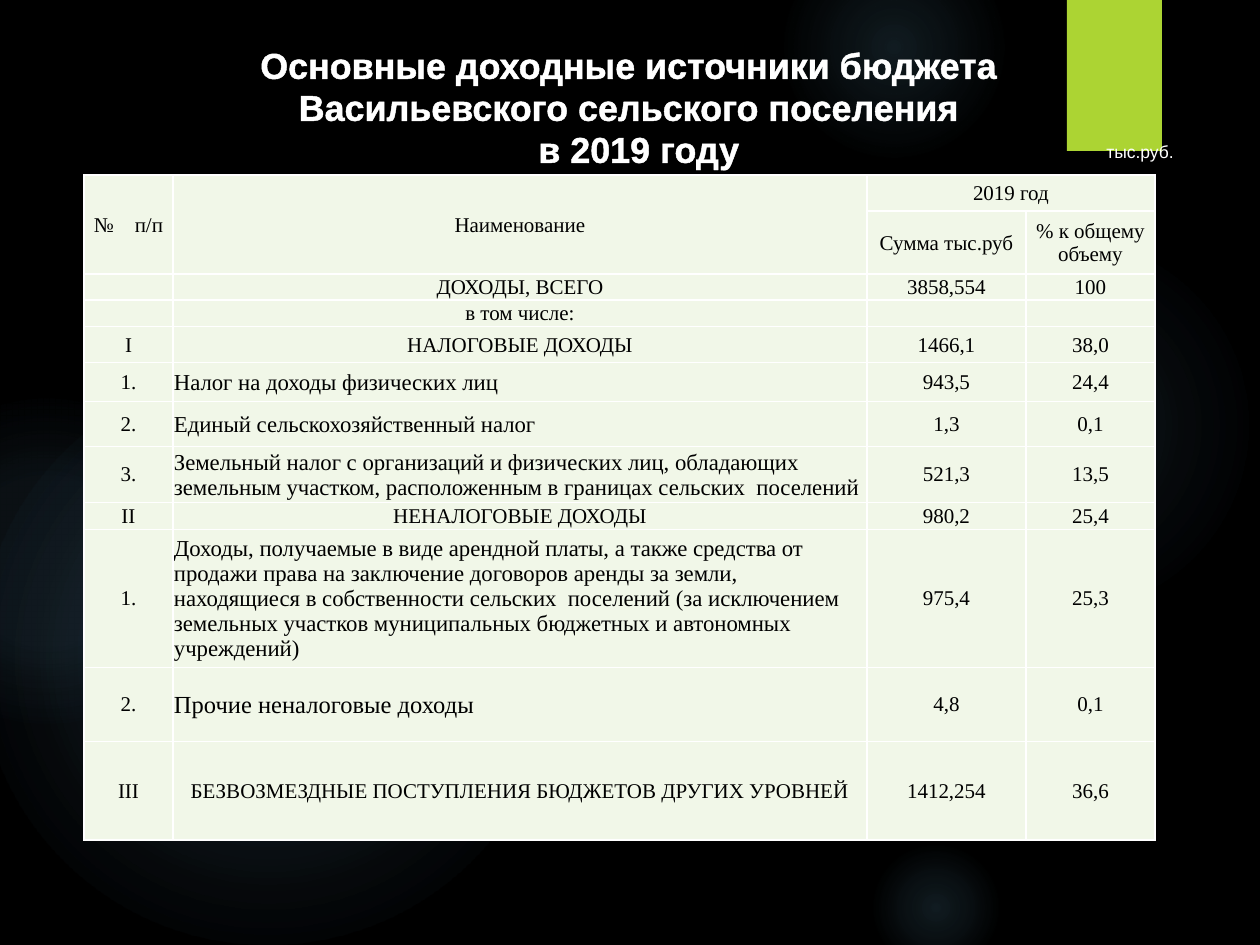
from dataclasses import dataclass
from typing import Any

from lxml.etree import Element, SubElement
from pptx import Presentation
from pptx.dml.color import RGBColor
from pptx.enum.shapes import MSO_SHAPE as Shape
from pptx.enum.text import MSO_ANCHOR as Anchor, PP_ALIGN as Align
from pptx.oxml.ns import qn
from pptx.util import Emu, Pt

EMU_PER_PX = 914400 / 126
WHITE, BLACK, LIME, GLOW, CELL = "FFFFFF", "000000", "ACD433", "7AC4F0", "F1F7E8"
SANS, SERIF = "Arial", "Times New Roman"


@dataclass
class Box:
    left: int
    top: int
    width: int
    height: int


@dataclass
class Glow:
    left: int
    top: int
    size: int
    stops: list[tuple[int, int]]


@dataclass
class Row:
    height: int
    texts: tuple[str, str, str, str]
    name_size: int = 12
    name_align: Any = Align.CENTER


GLOWS = [
    Glow(868, 231, 388, [(0, 7), (36, 6), (69, 0)]),
    Glow(784, -63, 220, [(0, 14), (36, 7), (73, 0)]),
    Glow(868, 840, 136, [(0, 14), (36, 7), (66, 0)]),
    Glow(-21, 368, 577, [(0, 11), (36, 10), (75, 0)]),
    Glow(-116, 399, 325, [(0, 8), (36, 8), (72, 0)]),
]
COLUMN_WIDTHS = [89, 694, 159, 129]
ROWS = [
    Row(36, ("№    п/п", "Наименование", "2019 год", "")),
    Row(63, ("", "", "Сумма тыс.руб", "% к общему объему")),
    Row(26, ("", "ДОХОДЫ, ВСЕГО", "3858,554", "100")),
    Row(26, ("", "в том числе:", "", "")),
    Row(36, ("I", "НАЛОГОВЫЕ ДОХОДЫ", "1466,1", "38,0")),
    Row(39, ("1.", "Налог на доходы физических лиц", "943,5", "24,4"), 13, Align.LEFT),
    Row(45, ("2.", "Единый сельскохозяйственный налог", "1,3", "0,1"), 13, Align.LEFT),
    Row(56, ("3.", "Земельный налог с организаций и физических лиц, обладающих "
             "земельным участком, расположенным в границах сельских  поселений",
             "521,3", "13,5"), 13, Align.LEFT),
    Row(27, ("II", "НЕНАЛОГОВЫЕ ДОХОДЫ", "980,2", "25,4")),
    Row(138, ("1.", "Доходы, получаемые в виде арендной платы, а также средства от "
              "продажи права на заключение договоров аренды за земли, находящиеся "
              "в собственности сельских  поселений (за исключением земельных "
              "участков муниципальных бюджетных и автономных учреждений)",
              "975,4", "25,3"), 13, Align.LEFT),
    Row(74, ("2.", "Прочие неналоговые доходы", "4,8", "0,1"), 14, Align.LEFT),
    Row(99, ("III", "БЕЗВОЗМЕЗДНЫЕ ПОСТУПЛЕНИЯ БЮДЖЕТОВ ДРУГИХ УРОВНЕЙ",
             "1412,254", "36,6")),
]
MERGES = [((0, 0), (1, 0)), ((0, 1), (1, 1)), ((0, 2), (0, 3))]


def px(length: int) -> Emu:
    return Emu(round(length * EMU_PER_PX))


def place(box: Box) -> list[Emu]:
    return [px(length) for length in (box.left, box.top, box.width, box.height)]


def color(value: str) -> RGBColor:
    return RGBColor.from_string(value)


def apply(target: Any, values: dict[str, Any]) -> None:
    for name, value in values.items():
        setattr(target, name, value)


def add_color(parent: Any, value: str, alpha: int = 100) -> None:
    node = SubElement(parent, qn("a:srgbClr"), val=value)
    if alpha < 100:
        SubElement(node, qn("a:alpha"), val=str(alpha * 1000))


def make_line(tag: str, value: str) -> Any:
    line = Element(qn(tag), w=str(Pt(1)))
    add_color(SubElement(line, qn("a:solidFill")), value)
    return line


def add_plain_shape(slide: Any, kind: Any, box: Box) -> Any:
    shape = slide.shapes.add_shape(kind, *place(box))
    shape.shadow.inherit = False
    shape.line.fill.background()
    return shape


def add_glow(slide: Any, glow: Glow) -> None:
    shape = add_plain_shape(slide, Shape.OVAL, Box(glow.left, glow.top, glow.size, glow.size))
    gradient = Element(qn("a:gradFill"), rotWithShape="1")
    stops = SubElement(gradient, qn("a:gsLst"))
    for position, alpha in glow.stops:
        add_color(SubElement(stops, qn("a:gs"), pos=str(position * 1000)), GLOW, alpha)
    circle = SubElement(gradient, qn("a:path"), path="circle")
    SubElement(circle, qn("a:fillToRect"), dict.fromkeys("ltrb", "50000"))
    shape.element.spPr.find(qn("a:prstGeom")).addnext(gradient)


def add_bookmark(slide: Any, box: Box) -> None:
    shape = add_plain_shape(slide, Shape.RECTANGLE, box)
    shape.fill.solid()
    shape.fill.fore_color.rgb = color(LIME)
    effects = shape.element.spPr.find(qn("a:effectLst"))
    shadow = SubElement(effects, qn("a:outerShdw"), blurRad=str(Pt(3)),
                        dist=str(Pt(2)), dir="5400000")
    add_color(shadow, BLACK, 45)


def write(paragraph: Any, text: str, align: Any, font: dict[str, Any], ink: str) -> None:
    paragraph.alignment = align
    paragraph.text = text
    for run in paragraph.runs:
        apply(run.font, font)
        run.font.color.rgb = color(ink)


def add_label(slide: Any, box: Box, text: str, align: Any, font: dict[str, Any]) -> Any:
    frame = slide.shapes.add_textbox(*place(box)).text_frame
    apply(frame, {"word_wrap": True, "vertical_anchor": Anchor.TOP})
    write(frame.paragraphs[0], text, align, font, WHITE)
    return frame


def add_title(slide: Any) -> None:
    text = "Основные доходные источники бюджета Васильевского сельского поселения\v  в 2019 году"
    font = {"name": SANS, "size": Pt(20.5), "bold": True}
    frame = add_label(slide, Box(152, 35, 954, 158), text, Align.CENTER, font)
    frame.margin_top = px(9)
    paragraph = frame.paragraphs[0]
    paragraph.line_spacing = Pt(24)
    for run in paragraph.runs:
        run.font._element.insert(0, make_line("a:ln", WHITE))


def format_cell(cell: Any, text: str, align: Any, size: int) -> None:
    margins = {f"margin_{side}": px(1) for side in ("left", "right", "top")}
    apply(cell, margins | {"margin_bottom": 0, "vertical_anchor": Anchor.MIDDLE})
    cell.fill.solid()
    cell.fill.fore_color.rgb = color(CELL)
    properties = cell._tc.get_or_add_tcPr()
    for index, side in enumerate("LRTB"):
        properties.insert(index, make_line(f"a:ln{side}", WHITE))
    paragraph = cell.text_frame.paragraphs[0]
    if text:
        write(paragraph, text, align, {"name": SERIF, "size": Pt(size)}, BLACK)
    else:
        SubElement(paragraph._p, qn("a:endParaRPr"), sz=str(size * 100))


def add_income_table(slide: Any, left: int, top: int) -> None:
    box = Box(left, top, sum(COLUMN_WIDTHS), sum(row.height for row in ROWS))
    table = slide.shapes.add_table(len(ROWS), len(COLUMN_WIDTHS), *place(box)).table
    apply(table, {"first_row": False, "horz_banding": False})
    for column, width in zip(table.columns, COLUMN_WIDTHS):
        column.width = px(width)
    for row_index, row in enumerate(ROWS):
        table.rows[row_index].height = px(row.height)
        for column_index, text in enumerate(row.texts):
            is_name = column_index == 1
            format_cell(table.cell(row_index, column_index), text,
                        row.name_align if is_name else Align.CENTER,
                        row.name_size if is_name else 12)
    for first, last in MERGES:
        table.cell(*first).merge(table.cell(*last))


def main() -> None:
    presentation = Presentation()
    apply(presentation, {"slide_width": px(1260), "slide_height": px(945)})
    slide = presentation.slides.add_slide(presentation.slide_layouts[6])
    slide.background.fill.solid()
    slide.background.fill.fore_color.rgb = color(BLACK)
    for glow in GLOWS:
        add_glow(slide, glow)
    add_bookmark(slide, Box(1067, 0, 95, 151))
    add_title(slide)
    add_label(slide, Box(968, 135, 218, 34), "тыс.руб.", Align.RIGHT,
              {"name": SANS, "size": Pt(10)})
    add_income_table(slide, 84, 175)
    presentation.save("out.pptx")


if __name__ == "__main__":
    main()
